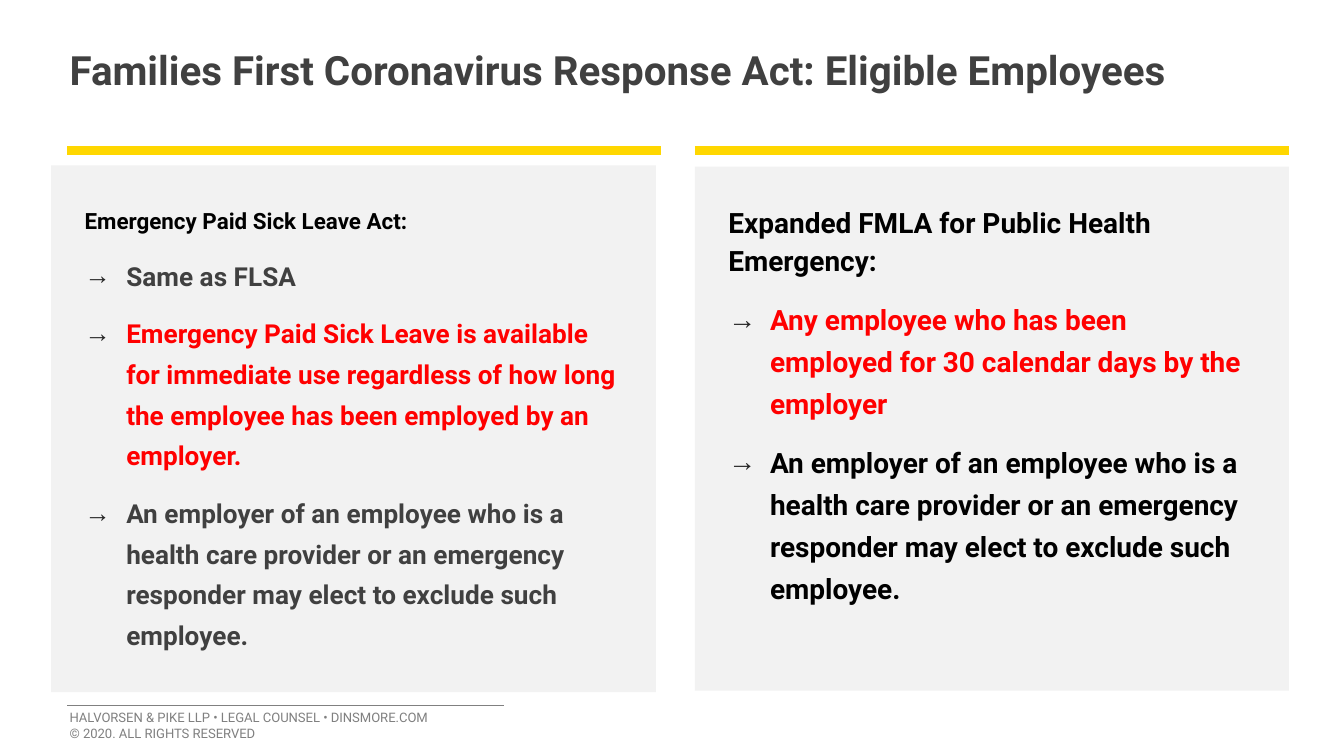
from lxml.etree import SubElement
from pptx import Presentation
from pptx.dml.color import RGBColor
from pptx.enum.shapes import MSO_CONNECTOR as CONN, MSO_SHAPE as SHAPE
from pptx.enum.text import MSO_ANCHOR as ANCHOR, PP_ALIGN as ALIGN
from pptx.oxml.ns import qn
from pptx.util import Inches, Pt

COLORS = {"yellow": "FFD700", "panel": "F2F2F2", "black": "000000", "gray": "404040",
          "red": "FF0000", "bullet": "262626", "footer": "808080"}
FONT, BULLET_FONT = "Roboto", "Arial"
WIDTH = 10
HEIGHT = WIDTH * 9 / 16
RULE_LEFT, RULE_WIDTH, GUTTER, RULE_Y = 0.5, 4.42, 0.25, 1.12
INDENT, INSET = 0.31, 0.25

TITLE = "Families First Coronavirus Response Act: Eligible Employees"
FOOTER = ["HALVORSEN & PIKE LLP • LEGAL COUNSEL • DINSMORE.COM",
          "© 2020. ALL RIGHTS RESERVED"]
EXCLUSION = ("An employer of an employee who is a health care provider or an emergency "
             "responder may elect to exclude such employee.")
PANELS = [
    {"box": (0.38, 1.23, 4.5, 3.92), "heading": "Emergency Paid Sick Leave Act:",
     "heading_size": 12, "size": 14, "heading_spacing": 1.3, "spacing": 1.3,
     "bullets": [
         ("Same as FLSA", "gray"),
         ("Emergency Paid Sick Leave is available for immediate use regardless of how "
          "long the employee has been employed by an employer.", "red"),
         (EXCLUSION, "gray")]},
    {"box": (RULE_LEFT + RULE_WIDTH + GUTTER, 1.24, RULE_WIDTH, 3.9),
     "heading": "Expanded FMLA for Public Health Emergency:",
     "heading_size": 15, "size": 15, "heading_spacing": 1.15, "spacing": 1.25,
     "bullets": [
         ("Any employee who has been employed for 30 calendar days by the employer", "red"),
         (EXCLUSION, "black")]},
]


def rgb(name):
    return RGBColor.from_string(COLORS[name])


def write(p, text, size, color, bold=False):
    p.text = text
    p.alignment = ALIGN.LEFT
    for r in p.runs:
        r.font.name, r.font.size, r.font.bold = FONT, Pt(size), bold
        r.font.color.rgb = rgb(color)


def add_rule(s, left, y, width, color, weight):
    line = s.shapes.add_connector(CONN.STRAIGHT, Inches(left), Inches(y),
                                  Inches(left + width), Inches(y))
    line.line.color.rgb = rgb(color)
    line.line.width = Pt(weight)
    SubElement(line.element.spPr, qn("a:effectLst"))


def add_text(s, box, lines, size, color, bold=False):
    tf = s.shapes.add_textbox(*map(Inches, box)).text_frame
    tf.word_wrap = True
    tf.text = "\n".join(lines)
    for p, text in zip(tf.paragraphs, lines):
        write(p, text, size, color, bold)


def set_bullet(p):
    pPr = p._p.get_or_add_pPr()
    pPr.set("marL", str(Inches(INDENT)))
    pPr.set("indent", str(-Inches(INDENT)))
    SubElement(SubElement(pPr, qn("a:buClr")), qn("a:srgbClr"), val=COLORS["bullet"])
    SubElement(pPr, qn("a:buFont"), typeface=BULLET_FONT)
    SubElement(pPr, qn("a:buChar"), char="→")


def add_panel(s, panel):
    sp = s.shapes.add_shape(SHAPE.RECTANGLE, *map(Inches, panel["box"]))
    sp.shadow.inherit = False
    sp.fill.solid()
    sp.fill.fore_color.rgb = rgb("panel")
    sp.line.fill.background()
    tf = sp.text_frame
    tf.word_wrap = True
    tf.vertical_anchor = ANCHOR.TOP
    tf.margin_left = tf.margin_right = tf.margin_top = tf.margin_bottom = Inches(INSET)

    p = tf.paragraphs[0]
    write(p, panel["heading"], panel["heading_size"], "black", True)
    p.line_spacing, p.space_after = panel["heading_spacing"], Pt(6)
    for text, color in panel["bullets"]:
        p = tf.add_paragraph()
        p.line_spacing, p.space_before, p.space_after = panel["spacing"], Pt(3), Pt(6)
        set_bullet(p)
        write(p, text, panel["size"], color, True)


def main():
    prs = Presentation()
    prs.slide_width, prs.slide_height = Inches(WIDTH), Inches(HEIGHT)
    s = prs.slides.add_slide(prs.slide_layouts[6])
    add_rule(s, RULE_LEFT, 5.25, 3.25, "footer", 0.5)
    for col, panel in enumerate(PANELS):
        add_rule(s, RULE_LEFT + col * (RULE_WIDTH + GUTTER), RULE_Y, RULE_WIDTH, "yellow", 4.5)
        add_panel(s, panel)
    add_text(s, (0.42, 0.29, 9.17, 0.76), [TITLE], 21.6, "gray", True)
    add_text(s, (0.42, 5.23, 3.3, 0.35), FOOTER, 7, "footer")
    prs.save("out.pptx")


if __name__ == "__main__":
    main()
